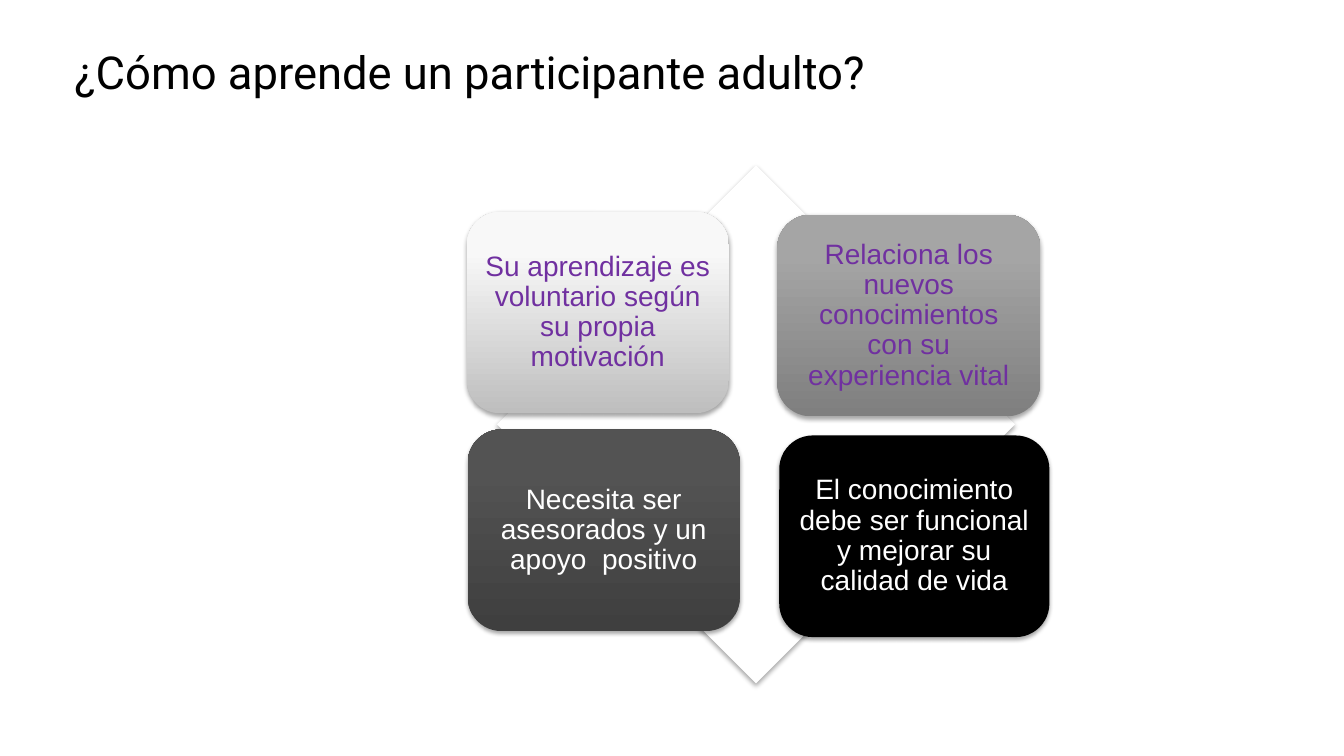
from lxml.etree import SubElement
from pptx import Presentation
from pptx.dml.color import RGBColor
from pptx.enum.shapes import MSO_SHAPE
from pptx.enum.text import MSO_ANCHOR, PP_ALIGN
from pptx.oxml.ns import qn
from pptx.util import Inches, Pt

WHITE = RGBColor(0xFF, 0xFF, 0xFF)
BLACK = RGBColor(0x00, 0x00, 0x00)
PURPLE = RGBColor(0x70, 0x30, 0xA0)
SILVER = RGBColor(0xBE, 0xBE, 0xBE)
PALE = RGBColor(0xF8, 0xF8, 0xF8)
GRAY = RGBColor(0x7F, 0x7F, 0x7F)
LIGHT_GRAY = RGBColor(0xA5, 0xA5, 0xA5)
CHARCOAL = RGBColor(0x3F, 0x3F, 0x3F)
SLATE = RGBColor(0x53, 0x53, 0x53)

TILE_HEIGHT = 26.67
# column, row, width, bottom colour, top colour, text colour, text
TILES = [
    (34.73, 28, 19.5, SILVER, PALE, PURPLE,
     "Su aprendizaje es voluntario según su propia motivación"),
    (57.83, 28.4, 19.58, GRAY, LIGHT_GRAY, PURPLE,
     "Relaciona los nuevos conocimientos con su experiencia vital"),
    (34.8, 56.8, 20.25, CHARCOAL, SLATE, WHITE,
     "Necesita ser asesorados y un apoyo  positivo"),
    (57.98, 57.6, 20.1, BLACK, BLACK, WHITE,
     "El conocimiento debe ser funcional y mejorar su calidad de vida"),
]


class Deck:
    """Places elements on a grid of 100 columns by 100 rows."""

    title_font, title_size = "Roboto", Pt(32.4)
    body_font, body_size = "Arial", Pt(20)

    def __init__(self):
        self.prs = Presentation()
        self.prs.slide_width = Inches(13.33)
        self.prs.slide_height = Inches(7.5)
        self.s = self.prs.slides.add_slide(self.prs.slide_layouts[6])

    def box(self, col, row, cols, rows):
        w, h = self.prs.slide_width / 100, self.prs.slide_height / 100
        return round(col * w), round(row * h), round(cols * w), round(rows * h)

    def set_text(self, sp, text, font, size, color, spacing):
        tf = sp.text_frame
        tf.text = text
        tf.word_wrap = True
        tf.vertical_anchor = MSO_ANCHOR.MIDDLE
        p = tf.paragraphs[0]
        p.alignment = PP_ALIGN.CENTER
        p.line_spacing = spacing
        r = p.runs[0]
        r.font.name, r.font.size = font, size
        r.font.color.rgb = color
        return tf

    def title(self, text, *cell):
        sp = self.s.shapes.add_textbox(*self.box(*cell))
        self.set_text(sp, text, self.title_font, self.title_size, BLACK, 0.8)

    def shape(self, kind, bottom, top, *cell):
        """Add a shape with a soft shadow, shaded from bottom to top."""
        sp = self.s.shapes.add_shape(kind, *self.box(*cell))
        sp.line.fill.background()
        if bottom == top:
            sp.fill.solid()
            sp.fill.fore_color.rgb = bottom
        else:
            sp.fill.gradient()
            sp.fill.gradient_angle = 90
            for stop, place, color in zip(sp.fill.gradient_stops, (0, 0.8), (bottom, top)):
                stop.position = place
                stop.color.rgb = color
        sp.shadow.inherit = False
        effects = sp._element.spPr.find(qn("a:effectLst"))
        shadow = SubElement(effects, qn("a:outerShdw"), blurRad=str(Pt(3.1)),
                            dist=str(Pt(1.8)), dir="5400000", rotWithShape="0")
        color = SubElement(shadow, qn("a:srgbClr"), val=str(BLACK))
        SubElement(color, qn("a:alpha"), val="35000")
        return sp

    def tile(self, col, row, cols, bottom, top, color, text):
        sp = self.shape(MSO_SHAPE.ROUNDED_RECTANGLE, bottom, top,
                        col, row, cols, TILE_HEIGHT)
        tf = self.set_text(sp, text, self.body_font, self.body_size, color, 0.9)
        tf.margin_left = tf.margin_right = Inches(0.08)
        tf.margin_top = tf.margin_bottom = Inches(0.08)


def main():
    deck = Deck()
    deck.title("¿Cómo aprende un participante adulto?", 4.13, 4, 61.65, 12.27)
    deck.shape(MSO_SHAPE.DIAMOND, WHITE, WHITE, 36.98, 21.87, 38.55, 68.53)
    for tile in TILES:
        deck.tile(*tile)
    deck.prs.save("out.pptx")


if __name__ == "__main__":
    main()
